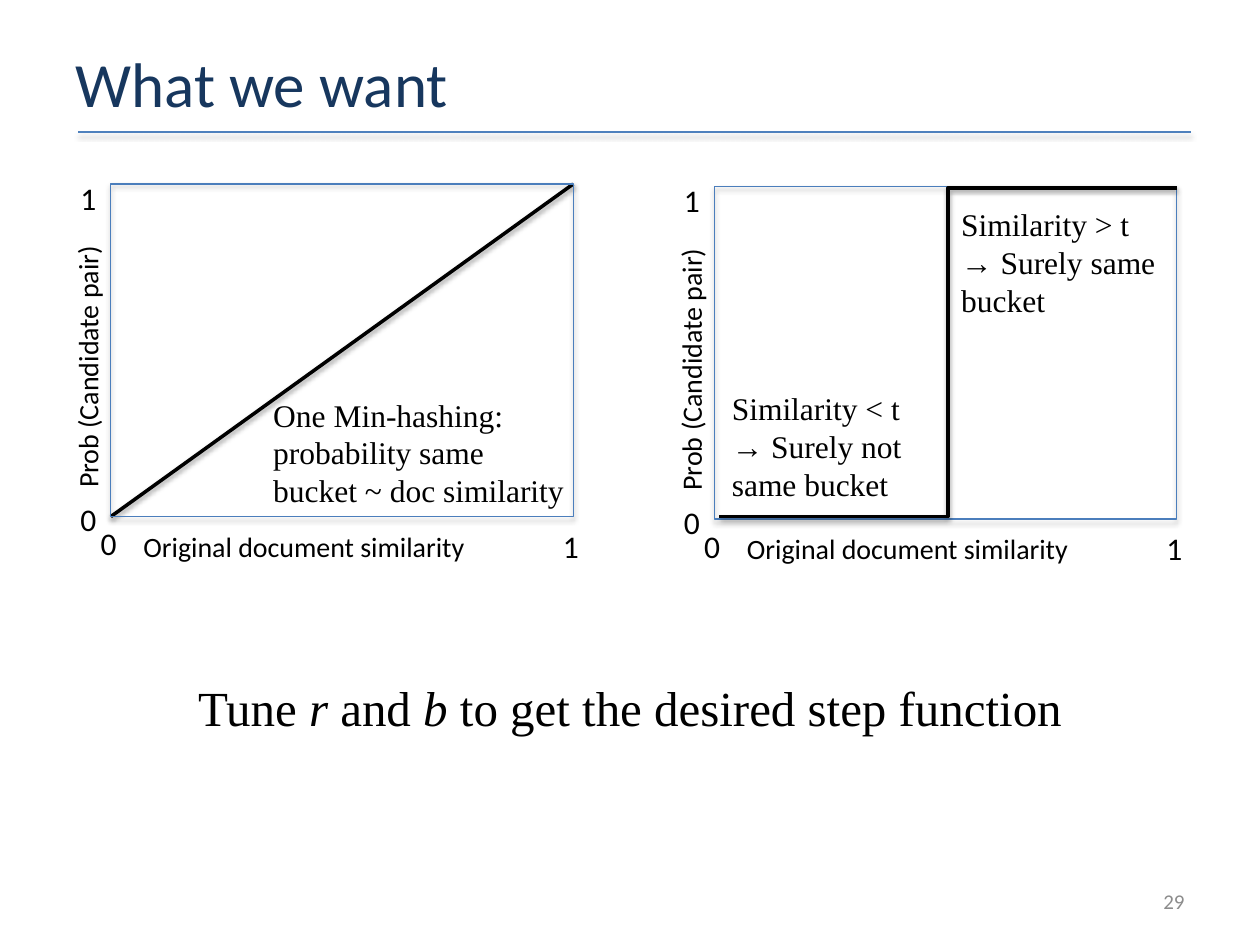
from lxml.etree import SubElement
from pptx import Presentation
from pptx.dml.color import RGBColor
from pptx.enum.shapes import MSO_CONNECTOR as CONN, MSO_SHAPE as SHAPE
from pptx.enum.text import MSO_ANCHOR as ANCHOR, PP_ALIGN as ALIGN
from pptx.oxml.ns import qn
from pptx.util import Inches, Pt

BLACK = RGBColor(0x00, 0x00, 0x00)
NAVY = RGBColor(0x17, 0x37, 0x5E)
RULE_BLUE = RGBColor(0x4F, 0x81, 0xBD)
FRAME_BLUE = RGBColor(0x4B, 0x7E, 0xBC)
GREY = RGBColor(0x8C, 0x8C, 0x8C)
SANS, SERIF = "Calibri", "Times New Roman"


def set_font(p, size, name=SANS, color=BLACK):
    p.font.size = Pt(size)
    p.font.name = name
    p.font.color.rgb = color


def add_shadow(sp, dist, alpha):
    """Soft shadow straight below; call after fill and line are set."""
    effects = SubElement(sp._element.spPr, qn("a:effectLst"))
    shadow = SubElement(effects, qn("a:outerShdw"), blurRad=str(Pt(3.1)),
                        dist=str(Pt(dist)), dir="5400000", rotWithShape="0")
    color = SubElement(shadow, qn("a:srgbClr"), val=str(BLACK))
    SubElement(color, qn("a:alpha"), val=str(alpha * 1000))


def add_line(shapes, x1, y1, x2, y2, color, width, kind=CONN.STRAIGHT):
    line = shapes.add_connector(kind, Inches(x1), Inches(y1), Inches(x2), Inches(y2))
    line.line.color.rgb = color
    line.line.width = Pt(width)
    add_shadow(line, 1.6, 38)


def add_text(shapes, text, x, y, w, h, size, name=SANS, color=BLACK):
    sp = shapes.add_textbox(Inches(x), Inches(y), Inches(w), Inches(h))
    tf = sp.text_frame
    tf.word_wrap = True
    tf.text = text
    set_font(tf.paragraphs[0], size, name, color)
    return sp


def add_plot(slide, x, y):
    """Empty unit plot whose frame has its top left corner at x, y."""
    shapes = slide.shapes.add_group_shape().shapes
    frame = shapes.add_shape(SHAPE.FLOWCHART_PROCESS, Inches(x), Inches(y),
                             Inches(3.67), Inches(2.64))
    frame.fill.background()
    frame.line.color.rgb = FRAME_BLUE
    frame.line.width = Pt(0.75)
    add_shadow(frame, 1.8, 35)
    # Axis titles
    title = add_text(shapes, "Prob (Candidate pair)", x - 1.26, y + 1.25, 2.15, 0.37, 16)
    title.rotation = 270
    add_text(shapes, "Original document similarity", x + 0.16, y + 2.69, 3.19, 0.37, 16)
    # Axis end labels
    for label, dx, dy in (("0", -0.18, 2.65), ("0", -0.34, 2.46),
                          ("1", 3.49, 2.67), ("1", -0.34, -0.09)):
        add_text(shapes, label, x + dx, y + dy, 0.34, 0.4, 18)


def add_title(slide, text):
    title = slide.shapes.title
    title.left, title.top, title.width, title.height = map(Inches, (0.5, 0.3, 9, 0.71))
    tf = title.text_frame
    tf.text = text
    tf.vertical_anchor = ANCHOR.MIDDLE
    p = tf.paragraphs[0]
    p.alignment = ALIGN.LEFT
    set_font(p, 36, SANS, NAVY)
    add_line(slide.shapes, 0.62, 1.05, 9.45, 1.05, RULE_BLUE, 1)


def add_conclusion(slide):
    sp = add_text(slide.shapes, "", 0.5, 5.33, 9, 1.37, 28, SERIF)
    p = sp.text_frame.paragraphs[0]
    p.alignment = ALIGN.CENTER
    p.space_before = Pt(5.6)
    for text, italic in (("Tune ", False), ("r ", True), ("and ", False),
                         ("b ", True), ("to get the desired step function", False)):
        r = p.add_run()
        r.text = text
        r.font.italic = italic


def add_page_number(slide, number):
    sp = add_text(slide.shapes, number, 7.17, 6.95, 2.33, 0.4, 12, SANS, GREY)
    sp.text_frame.vertical_anchor = ANCHOR.MIDDLE
    sp.text_frame.paragraphs[0].alignment = ALIGN.RIGHT


def main():
    prs = Presentation()
    prs.slide_width, prs.slide_height = Inches(10), Inches(7.5)
    slide = prs.slides.add_slide(prs.slide_layouts[5])
    shapes = slide.shapes

    add_title(slide, "What we want")
    add_conclusion(slide)
    add_page_number(slide, "29")

    # Linear curve on the left, step curve on the right
    add_line(shapes, 0.88, 4.1, 4.55, 1.46, BLACK, 2)
    add_plot(slide, 0.88, 1.46)
    add_plot(slide, 5.67, 1.48)
    add_line(shapes, 9.34, 1.49, 5.71, 4.1, BLACK, 2, CONN.ELBOW)

    # Notes inside the plots
    for text, x, y, w in (
            ("One Min-hashing: probability same bucket ~ doc similarity", 2.07, 3.09, 2.59),
            ("Similarity < t → Surely not same bucket", 5.71, 3.04, 1.84),
            ("Similarity > t → Surely same bucket", 7.53, 1.58, 1.81)):
        add_text(shapes, text, x, y, w, 1.01, 18, SERIF)

    prs.save("out.pptx")


if __name__ == "__main__":
    main()
